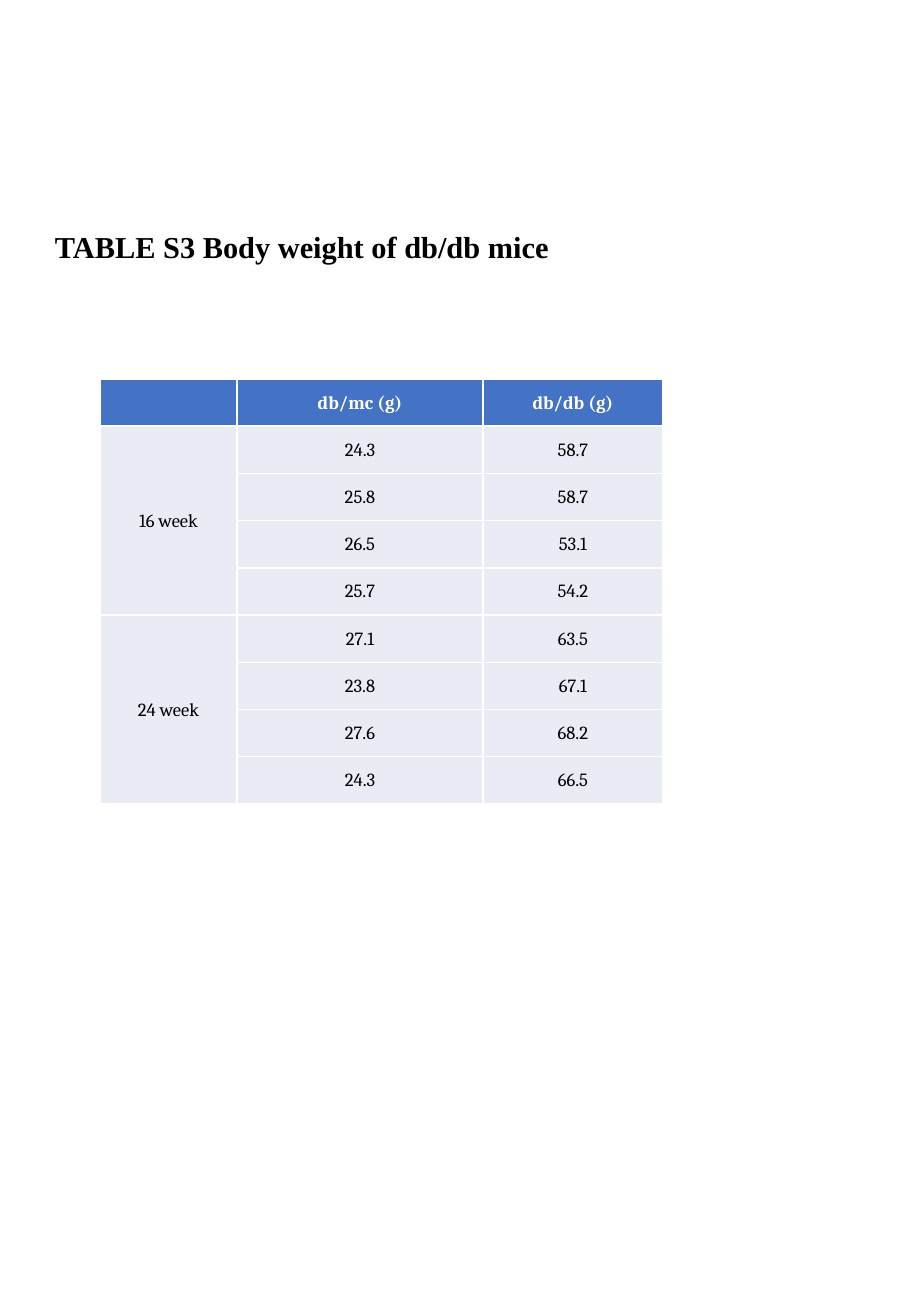
import pptx
import pptx.dml.color
import pptx.enum.text
import pptx.oxml
import pptx.oxml.ns
import pptx.util

TITLE = "TABLE S3 Body weight of db/db mice"
HEADER = ("", "db/mc (g)", "db/db (g)")
GROUPS = {
    "16 week": [("24.3", "58.7"), ("25.8", "58.7"), ("26.5", "53.1"), ("25.7", "54.2")],
    "24 week": [("27.1", "63.5"), ("23.8", "67.1"), ("27.6", "68.2"), ("24.3", "66.5")],
}
COLORS = {"header": "4472C4", "body": "E9EBF5", "white": "FFFFFF", "black": "000000"}
SLIDE_SIZE = (911, 1316)
TITLE_BOX = (43, 222, 572, 49)
TABLE_LEFT, TABLE_TOP, TABLE_HEIGHT = 100, 379, 425
COLUMN_WIDTHS = (137, 246, 180)
CELL_MARGIN = 1


def px(n):
    return round(n * 914400 / 121.5)


def rgb(name):
    return pptx.dml.color.RGBColor.from_string(COLORS[name])


def write(tf, text, font="Cambria", size=11, color="black", bold=False, align="CENTER"):
    p = tf.paragraphs[0]
    p.alignment = getattr(pptx.enum.text.PP_ALIGN, align)
    r = p.add_run()
    r.text = text
    r.font.name = font
    r.font.size = pptx.util.Pt(size)
    r.font.bold = bold
    r.font.color.rgb = rgb(color)


def style_cell(cell, fill):
    cell.vertical_anchor = pptx.enum.text.MSO_ANCHOR.MIDDLE
    cell.margin_left = cell.margin_right = cell.margin_top = px(CELL_MARGIN)
    cell.margin_bottom = 0
    tc_pr = cell._tc.get_or_add_tcPr()
    for side in ("lnL", "lnR", "lnT", "lnB"):
        tc_pr.append(pptx.oxml.parse_xml(
            f'<a:{side} {pptx.oxml.ns.nsdecls("a")} w="{pptx.util.Pt(1)}"><a:solidFill>'
            f'<a:srgbClr val="{COLORS["white"]}"/></a:solidFill></a:{side}>'))
    cell.fill.solid()
    cell.fill.fore_color.rgb = rgb(fill)


def add_weight_table(slide):
    rows = [HEADER]
    spans = []
    for week, weights in GROUPS.items():
        spans.append((len(rows), len(rows) + len(weights) - 1))
        rows += [(week if i == 0 else "", *pair) for i, pair in enumerate(weights)]

    table = slide.shapes.add_table(
        len(rows), len(HEADER), px(TABLE_LEFT), px(TABLE_TOP),
        px(sum(COLUMN_WIDTHS)), px(TABLE_HEIGHT)).table
    table.horz_banding = False
    for column, width in zip(table.columns, COLUMN_WIDTHS):
        column.width = px(width)
    for i, values in enumerate(rows):
        table.rows[i].height = px(TABLE_HEIGHT / len(rows))
        head = i == 0
        for j, text in enumerate(values):
            cell = table.cell(i, j)
            style_cell(cell, "header" if head else "body")
            if text:
                write(cell.text_frame, text, color="white" if head else "black", bold=head)
    for first, last in spans:
        table.cell(first, 0).merge(table.cell(last, 0))


def main():
    prs = pptx.Presentation()
    prs.slide_width, prs.slide_height = map(px, SLIDE_SIZE)
    slide = prs.slides.add_slide(prs.slide_layouts[6])
    tf = slide.shapes.add_textbox(*map(px, TITLE_BOX)).text_frame
    tf.word_wrap = True
    write(tf, TITLE, font="Times New Roman", size=18, bold=True, align="LEFT")
    add_weight_table(slide)
    prs.save("out.pptx")


if __name__ == "__main__":
    main()
